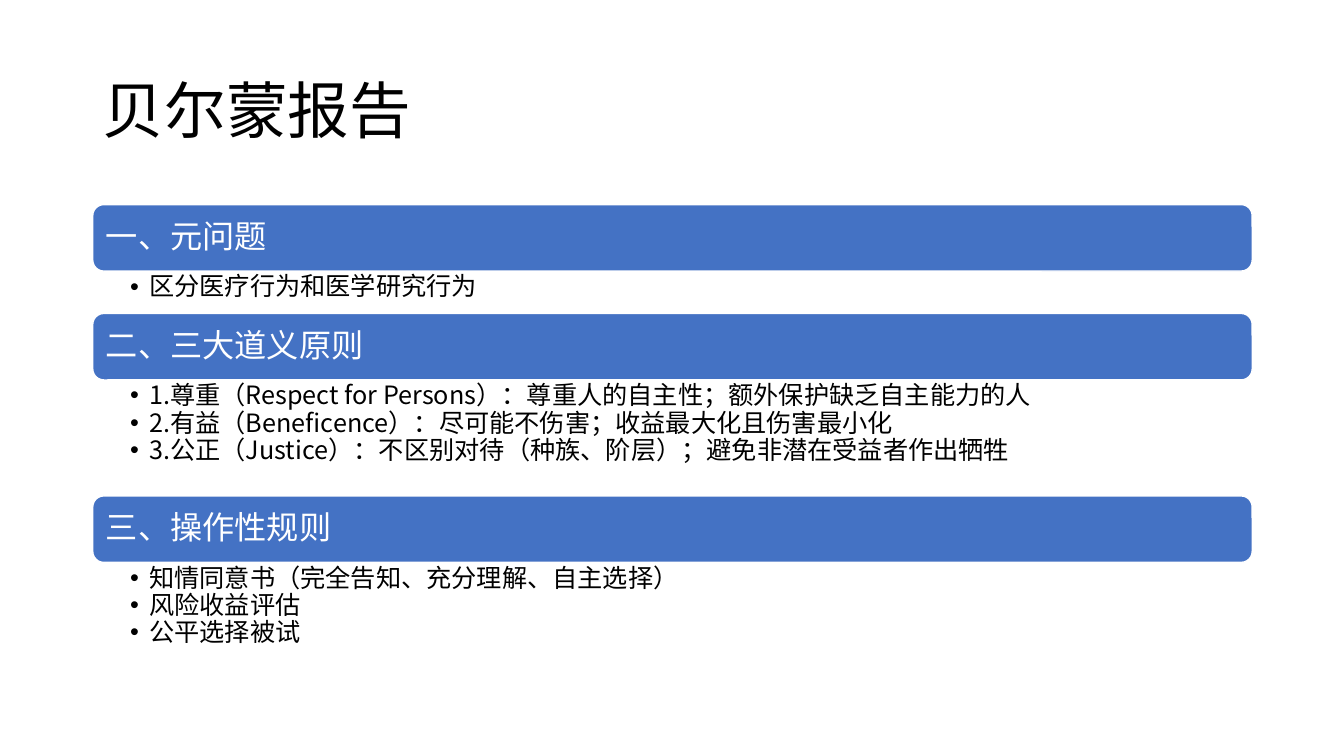
from lxml.etree import SubElement
from pptx import Presentation
from pptx.dml.color import RGBColor
from pptx.enum.shapes import MSO_SHAPE
from pptx.enum.text import MSO_ANCHOR, MSO_AUTO_SIZE, PP_ALIGN
from pptx.oxml.ns import qn
from pptx.util import Inches, Pt

BLACK = RGBColor(0x00, 0x00, 0x00)
WHITE = RGBColor(0xFF, 0xFF, 0xFF)
BLUE = RGBColor(0x44, 0x72, 0xC4)
FONT = "Noto Sans CJK SC"
LEFT, WIDTH = 0.92, 11.5
BAR_HEIGHT = 0.66

SECTIONS = [
    ("一、元问题", 0.42, ["区分医疗行为和医学研究行为"]),
    ("二、三大道义原则", 1.15, [
        "1.尊重（Respect for Persons）：尊重人的自主性；额外保护缺乏自主能力的人",
        "2.有益（Beneficence）：尽可能不伤害；收益最大化且伤害最小化",
        "3.公正（Justice）：不区别对待（种族、阶层）；避免非潜在受益者作出牺牲",
    ]),
    ("三、操作性规则", 1.15, [
        "知情同意书（完全告知、充分理解、自主选择）",
        "风险收益评估",
        "公平选择被试",
    ]),
]


class SlideBuilder:
    """Adds styled titles, section bars and bullet lists to one slide."""

    def __init__(self, s):
        self.s = s

    def place(self, sp, top, height):
        """Set a shape's position within the common column."""
        sp.left, sp.top = Inches(LEFT), Inches(top)
        sp.width, sp.height = Inches(WIDTH), Inches(height)

    def frame(self, sp, anchor, insets):
        """Set up a text frame with left, top, right and bottom insets."""
        tf = sp.text_frame
        tf.word_wrap = True
        tf.auto_size = MSO_AUTO_SIZE.NONE
        tf.vertical_anchor = anchor
        (tf.margin_left, tf.margin_top,
         tf.margin_right, tf.margin_bottom) = map(Inches, insets)
        return tf

    def add_text(self, p, text, size, color):
        """Add one run to a left-aligned paragraph."""
        p.alignment = PP_ALIGN.LEFT
        p.line_spacing = 0.9
        p.space_before = p.space_after = Pt(0)
        r = p.add_run()
        r.text = text
        r.font.size = Pt(size)
        r.font.bold = False
        r.font.color.rgb = color
        r.font.name = FONT
        SubElement(r._r.get_or_add_rPr(), qn("a:ea"), typeface=FONT)

    def title(self, text):
        """Fill the title placeholder."""
        sp = self.s.shapes.title
        self.place(sp, 0.4, 1.45)
        tf = self.frame(sp, MSO_ANCHOR.MIDDLE, (0.1, 0.05, 0.1, 0.05))
        self.add_text(tf.paragraphs[0], text, 44, BLACK)

    def bar(self, text, top):
        """Add a rounded section bar with its heading."""
        sp = self.s.shapes.add_shape(MSO_SHAPE.ROUNDED_RECTANGLE, 0, 0, 0, 0)
        self.place(sp, top, BAR_HEIGHT)
        sp.shadow.inherit = False
        sp.fill.solid()
        sp.fill.fore_color.rgb = BLUE
        sp.line.color.rgb = WHITE
        sp.line.width = Pt(1)
        tf = self.frame(sp, MSO_ANCHOR.MIDDLE, (0.1, 0.1, 0.1, 0.1))
        self.add_text(tf.paragraphs[0], text, 23, WHITE)

    def bullets(self, sp, items, top, height):
        """Fill a body placeholder with a bullet list."""
        self.place(sp, top, height)
        tf = self.frame(sp, MSO_ANCHOR.TOP, (0.37, 0.03, 0.18, 0.03))
        for i, item in enumerate(items):
            p = tf.add_paragraph() if i else tf.paragraphs[0]
            p.level = 1
            self.add_text(p, item, 18, BLACK)
            pPr = p._p.get_or_add_pPr()
            pPr.set("marL", str(Inches(0.19)))
            pPr.set("indent", str(Inches(-0.19)))
            SubElement(pPr, qn("a:buFont"), typeface="Arial")
            SubElement(pPr, qn("a:buChar"), char="•")


def main():
    """Build and save the slide."""
    prs = Presentation()
    prs.slide_width, prs.slide_height = Inches(13.33), Inches(7.5)
    s = prs.slides.add_slide(prs.slide_layouts.get_by_name("Comparison"))
    builder = SlideBuilder(s)
    builder.title("贝尔蒙报告")
    bodies = list(s.placeholders)[1:]
    top = 2.03
    for sp, (heading, height, items) in zip(bodies, SECTIONS):
        builder.bar(heading, top)
        builder.bullets(sp, items, top + BAR_HEIGHT, height)
        top += BAR_HEIGHT + height
    for sp in bodies[len(SECTIONS):]:
        sp.element.getparent().remove(sp.element)
    prs.save("out.pptx")


if __name__ == "__main__":
    main()
